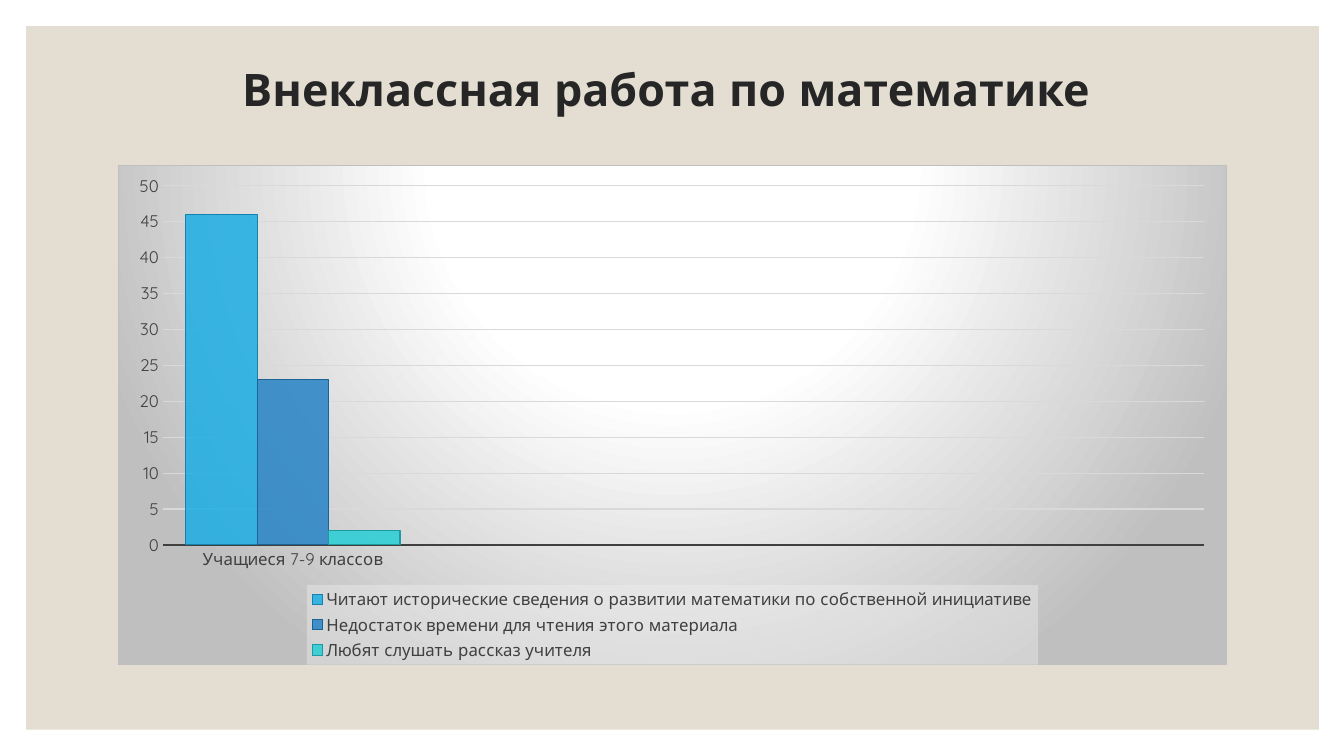
"""Builds the slide on extracurricular mathematics work with a column chart."""
from lxml import etree
from pptx import Presentation
from pptx.chart.data import CategoryChartData
from pptx.dml.color import RGBColor
from pptx.enum.chart import XL_CHART_TYPE, XL_LEGEND_POSITION, XL_TICK_MARK
from pptx.enum.shapes import MSO_SHAPE
from pptx.enum.text import MSO_ANCHOR, PP_ALIGN
from pptx.oxml import parse_xml
from pptx.oxml.ns import nsdecls, qn
from pptx.util import Inches, Pt

TITLE = "Внеклассная работа по математике "
GROUPS = ["Учащиеся 7-9 классов", "", "", ""]
ANSWERS = [
    ("Читают исторические сведения о развитии математики по собственной инициативе", 46, "1CADE4", "1482AC"),
    ("Недостаток времени для чтения этого материала", 23, "2683C6", "1D6294"),
    ("Любят слушать рассказ учителя", 2, "27CED7", "1D9BA1"),
]
COLORS = {"panel": "E3DED1", "title": "262626", "label": "404040", "grid": "D9D9D9",
          "white": "FFFFFF", "edge": "BFBFBF", "legend": "F2F2F2", "base": "000000"}
FONT = "Quicksand"
PANEL_BOX = (0.26, 0.26, 12.82, 6.98)
TITLE_BOX = (1.17, 0.54, 11, 0.74)
CHART_BOX = (1.17, 1.64, 11, 4.96)
PLOT_AREA = (0.04, 0.04, 0.94, 0.72)
LEGEND_AREA = (0.17, 0.84, 0.66, 0.16)
GRADIENT = [(0, "white"), (39, "white"), (100, "edge")]


def inches(box):
    return [Inches(length) for length in box]


def style_font(font, size, color):
    font.name, font.size = FONT, Pt(size)
    font.color.rgb = RGBColor.from_string(color)


def style_line(line, color, width):
    line.color.rgb = RGBColor.from_string(color)
    line.width = Pt(width)


def manual_layout(area, target=""):
    modes = '<c:xMode val="edge"/><c:yMode val="edge"/>'
    sizes = "".join(f'<c:{side} val="{share}"/>' for side, share in zip("xywh", area))
    return parse_xml(f'<c:layout {nsdecls("c")}><c:manualLayout>{target}{modes}{sizes}'
                     '</c:manualLayout></c:layout>')


def shape_properties(content):
    return parse_xml(f'<c:spPr {nsdecls("c", "a")}>{content}</c:spPr>')


def add_title(slide):
    frame = slide.shapes.add_textbox(*inches(TITLE_BOX)).text_frame
    frame.word_wrap = True
    frame.vertical_anchor = MSO_ANCHOR.MIDDLE
    frame.text = TITLE
    heading = frame.paragraphs[0]
    heading.alignment, heading.line_spacing = PP_ALIGN.CENTER, 0.9
    style_font(heading.runs[0].font, 32, COLORS["title"])
    heading.runs[0].font.bold = True


def style_axes(chart):
    for axis in (chart.category_axis, chart.value_axis):
        axis.major_tick_mark = axis.minor_tick_mark = XL_TICK_MARK.NONE
        style_font(axis.tick_labels.font, 12, COLORS["label"])
    style_line(chart.category_axis.format.line, COLORS["label"], 1.5)
    values = chart.value_axis
    values.format.line.fill.background()
    values.minimum_scale, values.maximum_scale, values.major_unit = 0, 50, 5
    style_line(values.major_gridlines.format.line, COLORS["grid"], 0.75)


def style_bars(plot):
    plot.gap_width, plot.overlap, plot.vary_by_categories = 65, 0, False
    for bars, (_, _, fill, edge) in zip(plot.series, ANSWERS):
        bars.format.fill.solid()
        bars.format.fill.fore_color.rgb = RGBColor.from_string(fill)
        color = bars.format.fill._xPr.find(".//" + qn("a:srgbClr"))
        etree.SubElement(color, qn("a:alpha")).set("val", "85000")
        style_line(bars.format.line, edge, 0.75)


def style_legend(chart):
    chart.has_legend = True
    legend = chart.legend
    legend.position = XL_LEGEND_POSITION.BOTTOM
    legend.include_in_layout = False
    style_font(legend.font, 12, COLORS["label"])
    overlay = legend._element.find(qn("c:overlay"))
    for layout in legend._element.findall(qn("c:layout")):
        legend._element.remove(layout)
    overlay.addprevious(manual_layout(LEGEND_AREA))
    overlay.addnext(shape_properties(
        f'<a:solidFill><a:srgbClr val="{COLORS["legend"]}"><a:alpha val="39000"/></a:srgbClr>'
        '</a:solidFill><a:ln><a:noFill/></a:ln>'))


def style_background(chart):
    space = chart._chartSpace
    stops = "".join(f'<a:gs pos="{share * 1000}"><a:srgbClr val="{COLORS[name]}"/></a:gs>'
                    for share, name in GRADIENT)
    space.find(qn("c:chart")).addnext(shape_properties(
        f'<a:gradFill><a:gsLst>{stops}</a:gsLst><a:path path="circle">'
        '<a:fillToRect l="50000" t="-80000" r="50000" b="180000"/></a:path></a:gradFill>'
        f'<a:ln w="9525"><a:solidFill><a:srgbClr val="{COLORS["edge"]}"/></a:solidFill></a:ln>'))
    plot_area = space.find(".//" + qn("c:plotArea"))
    for layout in plot_area.findall(qn("c:layout")):
        plot_area.remove(layout)
    plot_area.insert(0, manual_layout(PLOT_AREA, '<c:layoutTarget val="inner"/>'))


def add_answers_chart(slide):
    data = CategoryChartData()
    data.categories = GROUPS
    for name, count, _, _ in ANSWERS:
        data.add_series(name, [count] + [None] * (len(GROUPS) - 1))
    chart = slide.shapes.add_chart(XL_CHART_TYPE.COLUMN_CLUSTERED, *inches(CHART_BOX), data).chart
    chart.has_title = False
    style_font(chart.font, 10, COLORS["base"])
    style_axes(chart)
    style_bars(chart.plots[0])
    style_legend(chart)
    style_background(chart)


def main():
    deck = Presentation()
    deck.slide_width, deck.slide_height = Inches(13.33), Inches(7.5)
    slide = deck.slides.add_slide(deck.slide_layouts[6])
    panel = slide.shapes.add_shape(MSO_SHAPE.RECTANGLE, *inches(PANEL_BOX))
    panel.shadow.inherit = False
    panel.fill.solid()
    panel.fill.fore_color.rgb = RGBColor.from_string(COLORS["panel"])
    panel.line.fill.background()
    add_title(slide)
    add_answers_chart(slide)
    deck.save("out.pptx")


if __name__ == "__main__":
    main()
